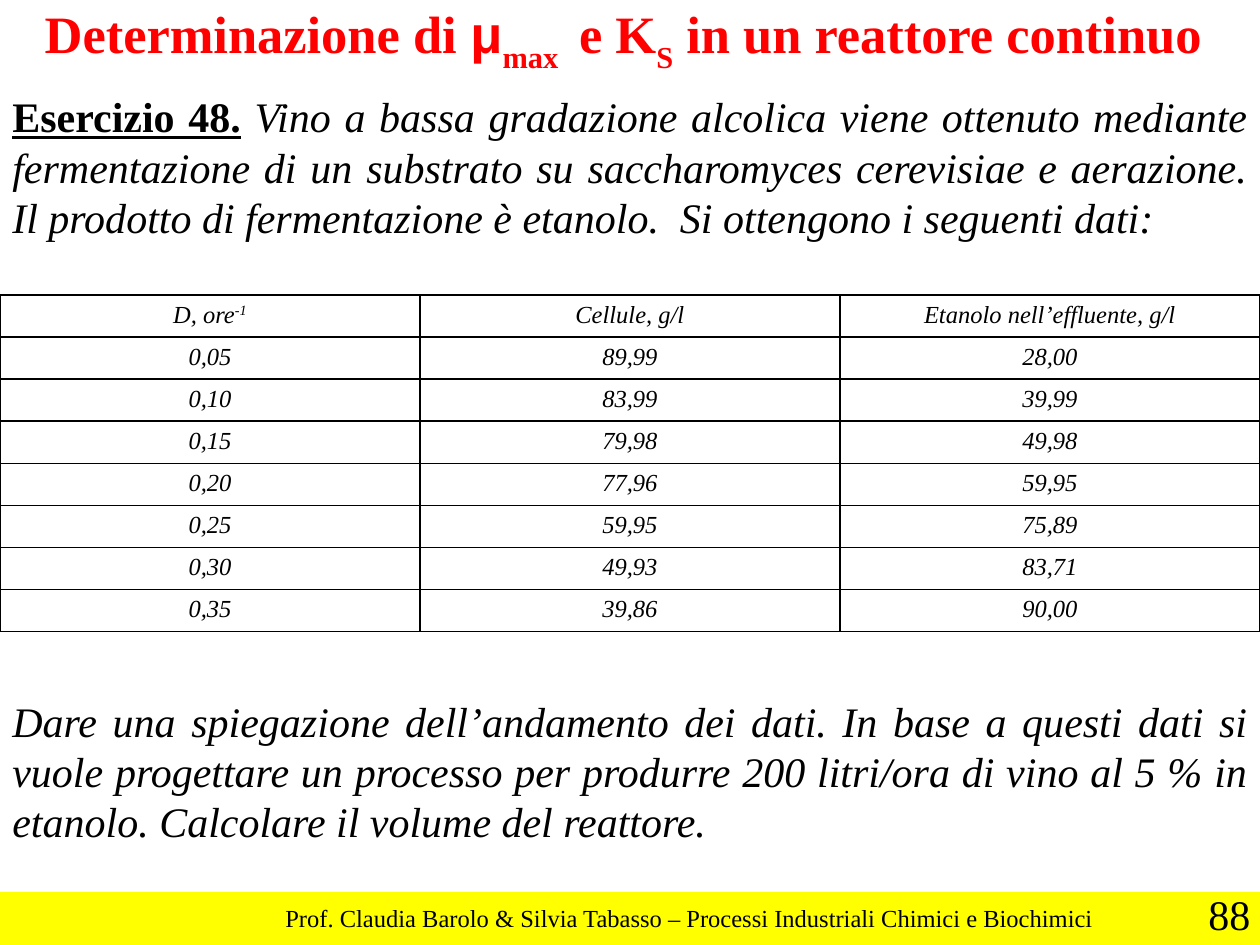
from lxml import etree
from pptx import Presentation
from pptx.dml.color import RGBColor
from pptx.enum.shapes import MSO_SHAPE
from pptx.enum.text import MSO_ANCHOR, PP_ALIGN
from pptx.oxml.ns import qn
from pptx.util import Pt

RECTANGLE = MSO_SHAPE.RECTANGLE
MIDDLE = MSO_ANCHOR.MIDDLE
CENTER, JUSTIFY, LEFT = PP_ALIGN.CENTER, PP_ALIGN.JUSTIFY, PP_ALIGN.LEFT

PX = 914400 // 126
WIDTH, HEIGHT = 1260, 945
SERIF, SANS = "Times New Roman", "Arial"
COLORS = {"title": "FF0000", "text": "000000", "band": "FFFF00", "border": "000000"}

TITLE_STYLE = {"size": 30, "color": "title", "bold": True}
BODY_STYLE = {"size": 24, "italic": True}
CELL_STYLE = {"size": 14, "italic": True}

TITLE = [
    ("Determinazione di ", {}),
    ("μ", {"font": SANS}),
    ("max ", {"baseline": -30}),
    (" e K", {}),
    ("S", {"baseline": -30}),
    (" in un reattore continuo ", {}),
]
EXERCISE = [
    ("Esercizio 48.", {"bold": True, "italic": False, "underline": True}),
    (" Vino a bassa gradazione alcolica viene ottenuto mediante fermentazione di un "
     "substrato su saccharomyces cerevisiae e aerazione. Il prodotto di fermentazione "
     "è etanolo.  Si ottengono i seguenti dati:", {}),
]
QUESTION = [
    ("Dare una spiegazione dell’andamento dei dati. In base a questi dati si vuole "
     "progettare un processo per produrre 200 litri/ora di vino al 5 % in etanolo. "
     "Calcolare il volume del reattore.", {}),
]
BODY = [
    (TITLE, TITLE_STYLE, CENTER, 0),
    (EXERCISE, BODY_STYLE, JUSTIFY, 9),
    (QUESTION, BODY_STYLE, JUSTIFY, 259),
]
HEADER = [
    [("D, ore", {}), ("-1", {"baseline": 30})],
    [("Cellule, g/l", {})],
    [("Etanolo nell’effluente, g/l", {})],
]
DATA = [
    ("0,05", "89,99", "28,00"),
    ("0,10", "83,99", "39,99"),
    ("0,15", "79,98", "49,98"),
    ("0,20", "77,96", "59,95"),
    ("0,25", "59,95", "75,89"),
    ("0,30", "49,93", "83,71"),
    ("0,35", "39,86", "90,00"),
]
FOOTER = [
    ("Prof. Claudia Barolo & Silvia Tabasso – Processi Industriali Chimici e Biochimici",
     14, (273, 897, 845, 43)),
    ("88", 24, (1196, 882, 66, 63)),
]
BAND_TOP = 892
BODY_HEIGHT = 847
TABLE_TOP, ROW_HEIGHT = 295, 42


def px(*lengths):
    return [length * PX for length in lengths]


def write(paragraph, pieces, style, align):
    paragraph.alignment = align
    for words, changes in pieces:
        look = {**style, **changes}
        run = paragraph.add_run()
        run.text = words
        font = run.font
        font.name = look.get("font", SERIF)
        font.size = Pt(look["size"])
        font.bold = look.get("bold", False)
        font.italic = look.get("italic", False)
        font.underline = look.get("underline", False)
        font.color.rgb = RGBColor.from_string(COLORS[look.get("color", "text")])
        if "baseline" in look:
            run._r.get_or_add_rPr().set("baseline", str(look["baseline"] * 1000))


def add_borders(cell):
    properties = cell._tc.get_or_add_tcPr()
    for side in ("lnL", "lnR", "lnT", "lnB"):
        line = etree.SubElement(properties, qn(f"a:{side}"), w=str(Pt(1)))
        fill = etree.SubElement(line, qn("a:solidFill"))
        etree.SubElement(fill, qn("a:srgbClr"), val=COLORS["border"])


def add_footer(slide):
    band = slide.shapes.add_shape(RECTANGLE, *px(0, BAND_TOP, WIDTH, HEIGHT - BAND_TOP))
    band.shadow.inherit = False
    band.fill.solid()
    band.fill.fore_color.rgb = RGBColor.from_string(COLORS["band"])
    band.line.fill.background()
    for words, size, place in FOOTER:
        frame = slide.shapes.add_textbox(*px(*place)).text_frame
        frame.word_wrap = False
        frame.margin_right = 0
        write(frame.paragraphs[0], [(words, {})], {"size": size}, LEFT)


def add_body(slide):
    frame = slide.shapes.add_textbox(*px(0, 0, WIDTH, BODY_HEIGHT)).text_frame
    frame.word_wrap = True
    frame.vertical_anchor = MIDDLE
    for index, (pieces, style, align, gap) in enumerate(BODY):
        paragraph = frame.add_paragraph() if index else frame.paragraphs[0]
        paragraph.space_before = Pt(gap)
        write(paragraph, pieces, style, align)


def add_data_table(slide):
    rows = [HEADER] + [[[(value, {})] for value in values] for values in DATA]
    table = slide.shapes.add_table(
        len(rows), len(HEADER), *px(0, TABLE_TOP, WIDTH, ROW_HEIGHT * len(rows))
    ).table
    table.first_row = False
    table.horz_banding = False
    for row, entries in enumerate(rows):
        for column, pieces in enumerate(entries):
            cell = table.cell(row, column)
            add_borders(cell)
            cell.fill.background()
            write(cell.text_frame.paragraphs[0], pieces, CELL_STYLE, CENTER)


def main():
    presentation = Presentation()
    presentation.slide_width, presentation.slide_height = px(WIDTH, HEIGHT)
    slide = presentation.slides.add_slide(presentation.slide_layouts[6])
    add_footer(slide)
    add_body(slide)
    add_data_table(slide)
    presentation.save("out.pptx")


if __name__ == "__main__":
    main()
